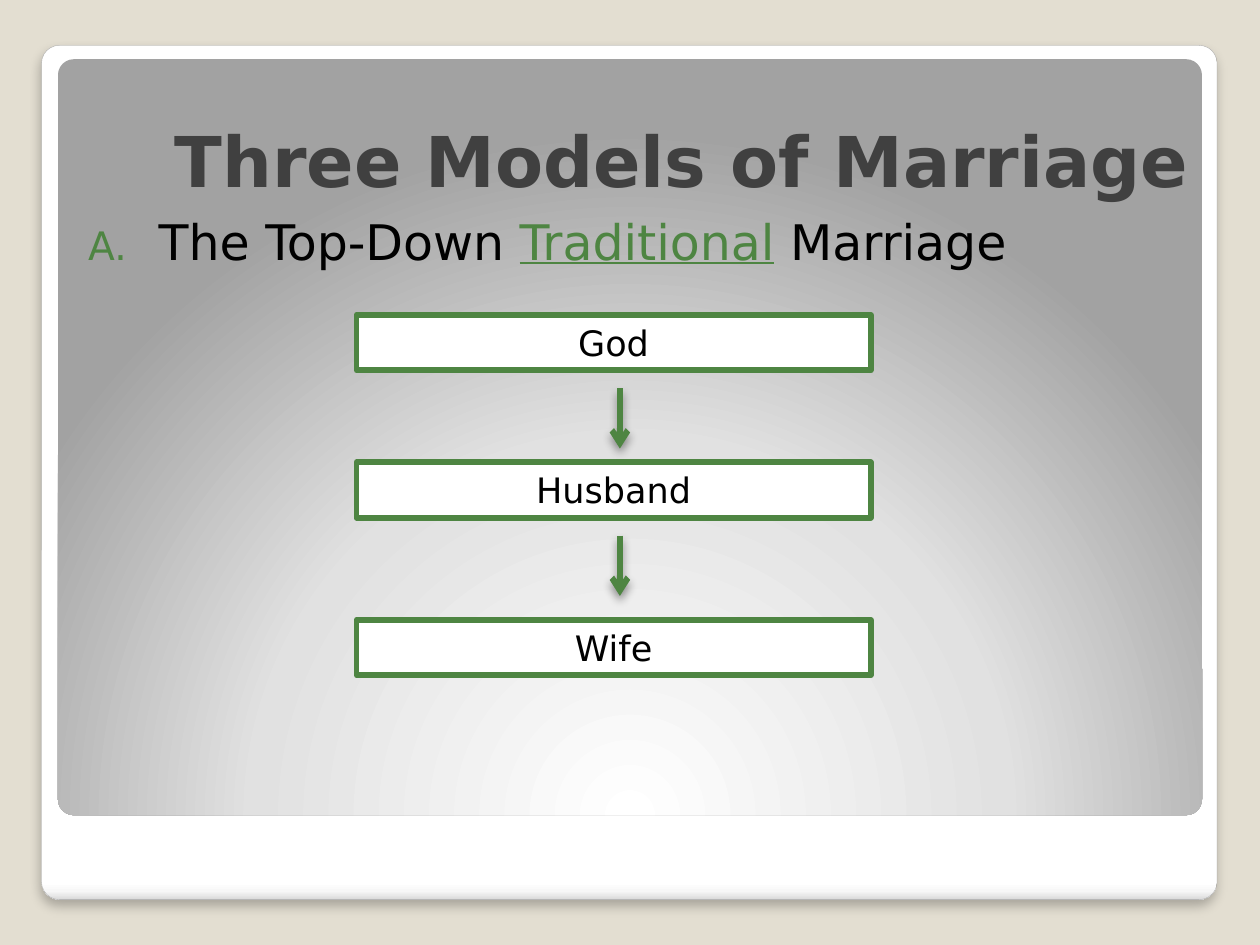
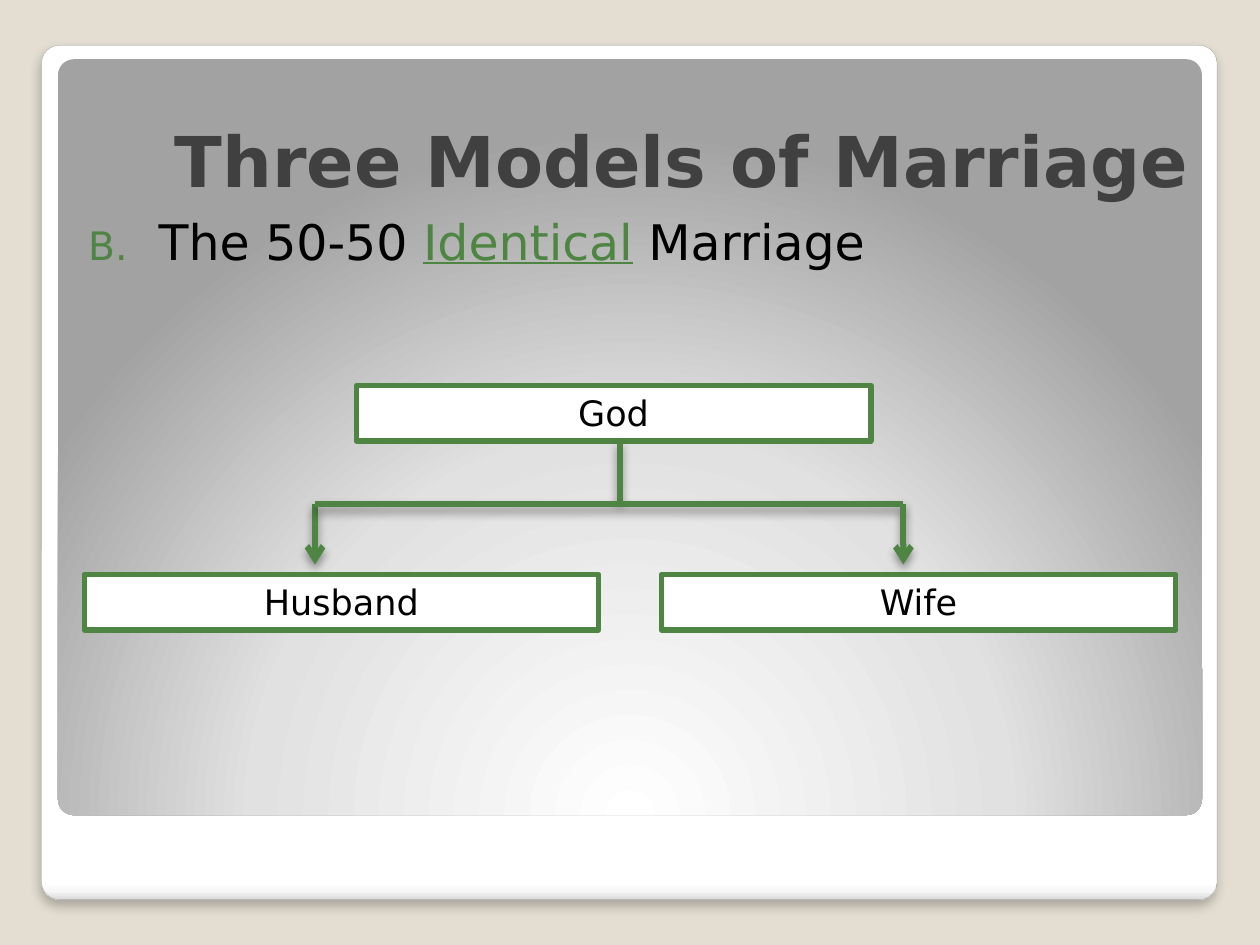
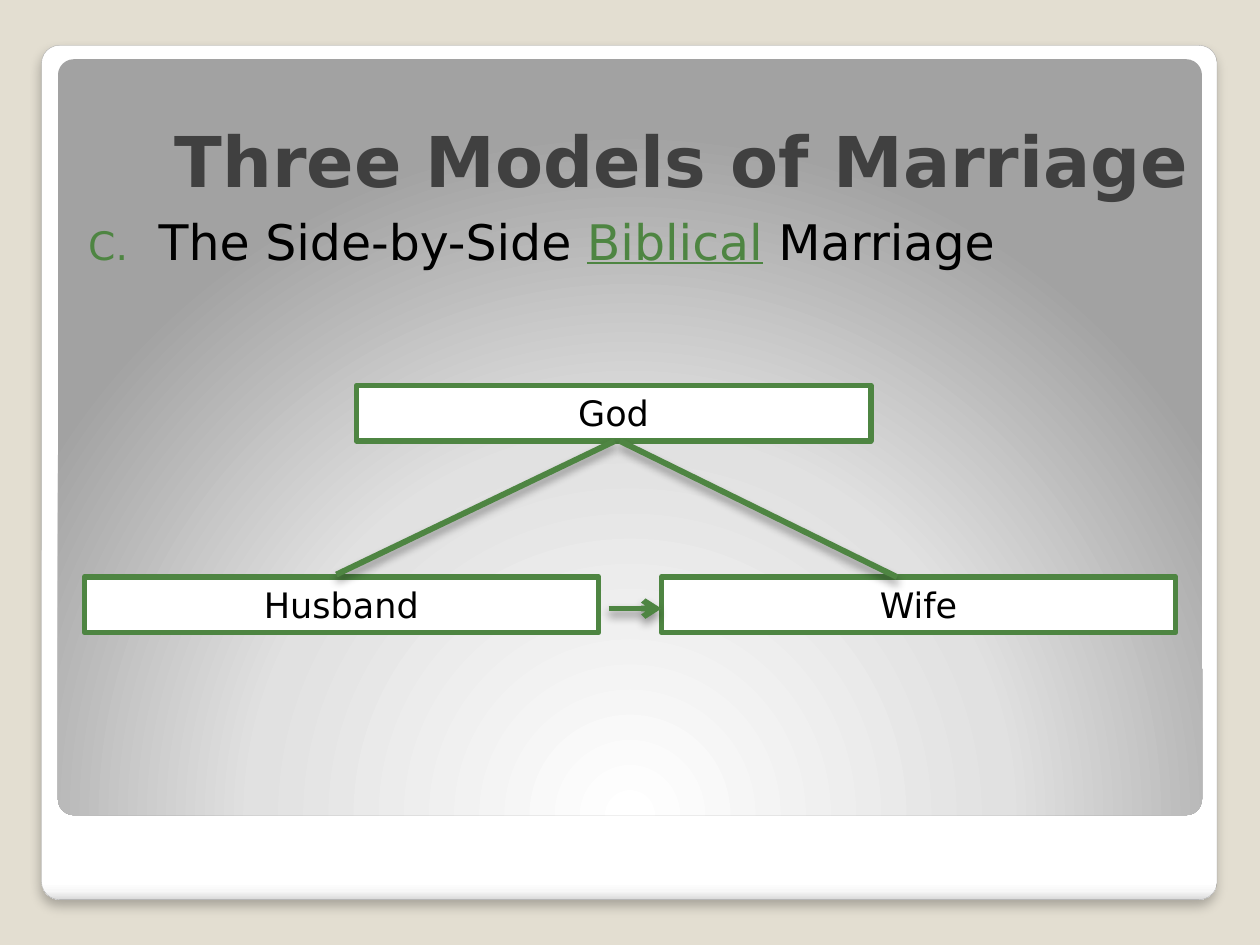
from pptx import Presentation
from pptx.dml.color import RGBColor
from pptx.enum.shapes import MSO_CONNECTOR, MSO_SHAPE
from pptx.enum.text import MSO_ANCHOR, MSO_AUTO_SIZE, PP_ALIGN
from pptx.oxml import parse_xml
from pptx.oxml.ns import nsdecls, qn
from pptx.util import Emu, Inches, Pt

HEX = {"sand": "E3DED1", "edge": "A4A4A4", "title": "404040",
       "green": "4E8542", "white": "FFFFFF", "black": "000000"}
COLOR = {name: RGBColor.from_string(value) for name, value in HEX.items()}
FONT = "DejaVu Sans"
BORDER = Pt(3.35)

# Role boxes: three columns, with the centre one between the two outer ones
LEFT, CENTER, RIGHT = 0.67, 2.83, 5.25
BOX_W, BOX_H = 4.08, 0.44
AXIS = 4.92
ARROW = 0.48
TOP, BAR = 3.06, 4.0
GOD_BASE = TOP + BOX_H

# Each model: adjective with the words before it, boxes (role, left, top),
# and lines (x1, y1, x2, y2, arrowhead)
MODELS = [
    ("The Top-Down ", "Traditional",
     [("God", CENTER, 2.5), ("Husband", CENTER, 3.67), ("Wife", CENTER, 4.92)],
     [(AXIS, y, AXIS, y + ARROW, True) for y in (3.08, 4.25)]),
    ("The 50-50 ", "Identical",
     [("God", CENTER, TOP), ("Husband", LEFT, 4.56), ("Wife", RIGHT, 4.56)],
     [(AXIS, GOD_BASE, AXIS, GOD_BASE + ARROW, False),
      (2.5, BAR, 2.5, BAR + ARROW, True),
      (2.5, BAR, 7.17, BAR, False),
      (7.17, BAR, 7.17, BAR + ARROW, True)]),
    ("The Side-by-Side ", "Biblical",
     [("God", CENTER, TOP), ("Husband", LEFT, 4.58), ("Wife", RIGHT, 4.58)],
     [(4.88, GOD_BASE, 2.67, 4.56, False),
      (4.83, 4.83, RIGHT, 4.83, True),
      (AXIS, GOD_BASE, 7.12, 4.58, False)]),
]


def cast_shadow(shape, opacity, blur, distance):
    """Add a black shadow straight below; opacity in percent, lengths in points."""
    shape.element.spPr.append(parse_xml(
        f'<a:effectLst {nsdecls("a")}><a:outerShdw blurRad="{Pt(blur)}" dist="{Pt(distance)}" '
        f'dir="5400000" algn="tl" rotWithShape="0"><a:srgbClr val="{HEX["black"]}">'
        f'<a:alpha val="{opacity * 1000}"/></a:srgbClr></a:outerShdw></a:effectLst>'))


def add_panel(slide, bounds, stops, direction):
    """Add a rounded panel with a gradient; stops are (percent, hex colour)."""
    panel = slide.shapes.add_shape(MSO_SHAPE.ROUNDED_RECTANGLE, *map(Inches, bounds))
    panel.adjustments[0] = 0.021
    panel.fill.background()
    colors = "".join(f'<a:gs pos="{pos * 1000}"><a:srgbClr val="{value}"/></a:gs>'
                     for pos, value in stops)
    properties = panel.element.spPr
    properties.replace(properties.find(qn("a:noFill")), parse_xml(
        f'<a:gradFill {nsdecls("a")} rotWithShape="1"><a:gsLst>{colors}</a:gsLst>'
        f'{direction}</a:gradFill>'))
    return panel


prs = Presentation()
prs.slide_width, prs.slide_height = Inches(10), Inches(7.5)
layout = prs.slide_layouts.get_by_name("Title Only")
background = prs.slide_master.background.fill
background.solid()
background.fore_color.rgb = COLOR["sand"]

slides = [prs.slides.add_slide(layout) for _ in MODELS]

# The two panels are made on a slide and then moved to the shared layout
frame = add_panel(slides[0], (0.33, 0.36, 9.33, 6.78),
                  [(0, "FFFFFF"), (98, "FFFFFF"), (99, "F7F7F7"), (100, "DADADA")],
                  '<a:lin ang="5400000" scaled="0"/>')
frame.line.color.rgb = COLOR["edge"]
frame.line.width = Pt(0.16)
cast_shadow(frame, 25, 6, 4)
glow = add_panel(slides[0], (0.46, 0.47, 9.08, 6),
                 [(0, "FFFFFF"), (55, "E1E1E1"), (100, "A2A2A2")],
                 '<a:path path="circle"><a:fillToRect l="50000" t="175000" '
                 'r="50000" b="-75000"/></a:path>')
glow.line.fill.background()
glow.shadow.inherit = False
for position, panel in enumerate((frame, glow), start=2):
    layout.shapes.element.insert(position, panel.element)

for number, (slide, (lead, adjective, roles, lines)) in enumerate(zip(slides, MODELS), start=1):
    title = slide.shapes.title
    title.left, title.top, title.width, title.height = map(Inches, (0.58, 0.5, 8.95, 1.15))
    title.text_frame.text = "Three Models of Marriage"
    title.text_frame.vertical_anchor = MSO_ANCHOR.BOTTOM
    title.text_frame.auto_size = MSO_AUTO_SIZE.NONE
    heading = title.text_frame.paragraphs[0]
    heading.alignment = PP_ALIGN.RIGHT
    heading.font.name, heading.font.size, heading.font.bold = FONT, Pt(40), True
    heading.font.color.rgb = COLOR["title"]

    model = slide.shapes.add_textbox(*map(Inches, (0.5, 1.58, 8.95, 5.25))).text_frame
    model.word_wrap = True
    model.margin_left, model.margin_top = Inches(0.2), Inches(0.1)
    statement = model.paragraphs[0]
    statement.space_before = Pt(2.5)
    statement.font.name, statement.font.size = FONT, Pt(28)
    for words in (lead, adjective, " Marriage"):
        run = statement.add_run()
        run.text = words
        run.font.name, run.font.size = FONT, Pt(28)
        run.font.color.rgb = COLOR["green" if words == adjective else "black"]
        if words == adjective:
            run.font.underline = True
    numbering = statement._p.get_or_add_pPr()
    numbering.set("marL", str(Inches(0.56)))
    numbering.set("indent", str(Inches(-0.56)))
    for bullet in (f'<a:buClr {nsdecls("a")}><a:srgbClr val="{HEX["green"]}"/></a:buClr>',
                   f'<a:buSzPct {nsdecls("a")} val="80000"/>',
                   f'<a:buFont {nsdecls("a")} typeface="{FONT}"/>',
                   f'<a:buAutoNum {nsdecls("a")} type="alphaUcPeriod" startAt="{number}"/>'):
        numbering.insert_element_before(parse_xml(bullet), "a:tabLst", "a:defRPr", "a:extLst")

    for role, left, top in roles:
        box = slide.shapes.add_textbox(*map(Inches, (left, top, BOX_W, BOX_H)))
        box.fill.solid()
        box.fill.fore_color.rgb = COLOR["white"]
        box.line.color.rgb = COLOR["green"]
        box.line.width = BORDER
        box.text_frame.word_wrap = True
        box.text_frame.auto_size = MSO_AUTO_SIZE.SHAPE_TO_FIT_TEXT
        box.text_frame.text = role
        label = box.text_frame.paragraphs[0]
        label.alignment = PP_ALIGN.CENTER
        label.font.name, label.font.size = FONT, Pt(20)
        label.font.color.rgb = COLOR["black"]

    for *ends, has_arrow in lines:
        link = slide.shapes.add_connector(MSO_CONNECTOR.STRAIGHT, *map(Inches, ends))
        link.line.color.rgb = COLOR["green"]
        link.line.width = BORDER
        if has_arrow:
            link.line._get_or_add_ln().append(
                parse_xml(f'<a:tailEnd {nsdecls("a")} type="arrow"/>'))
        cast_shadow(link, 40, 5.2, 3)

prs.save("out.pptx")
